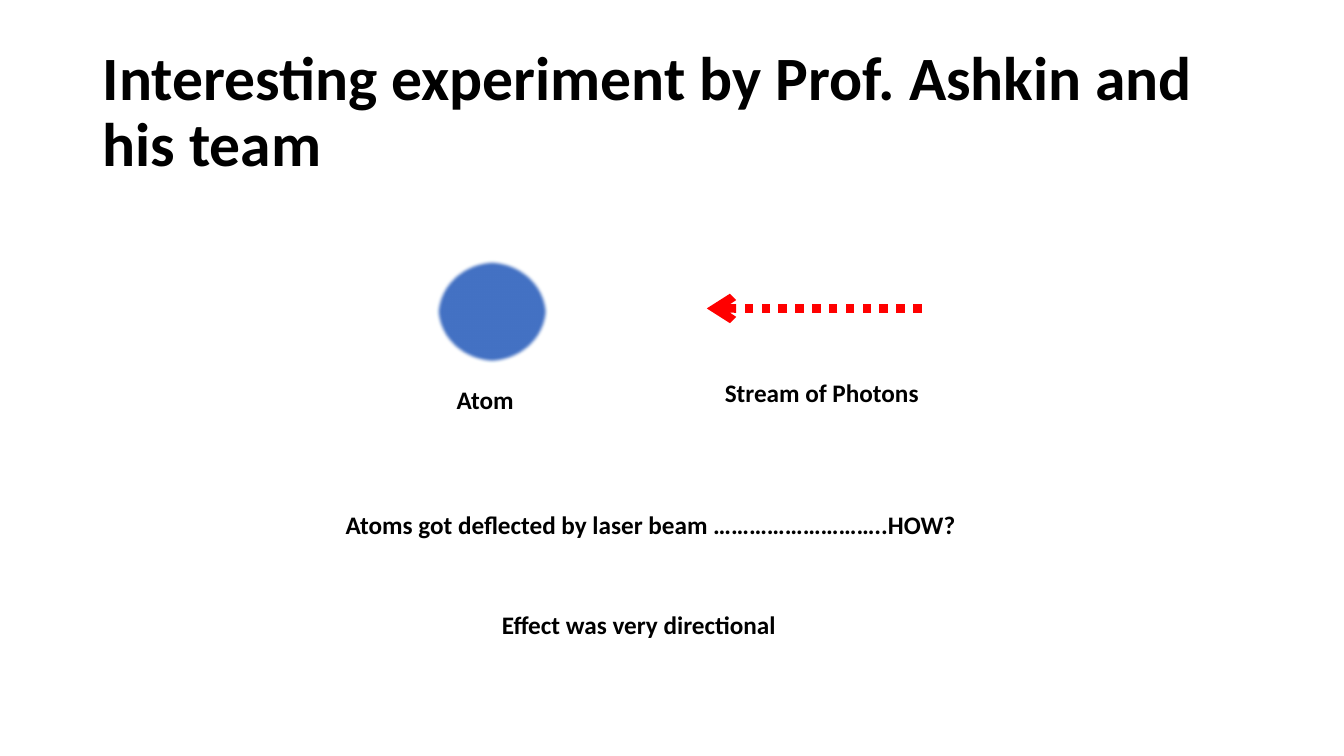
from lxml import etree
from pptx import Presentation
from pptx import util as u
from pptx.dml.color import RGBColor
from pptx.enum import dml, shapes, text
from pptx.oxml import ns

COLORS = {"ink": "000000", "atom": "4472C4", "rim": "00B0F0", "photons": "FF0000"}
BOLD = {"name": "Calibri", "bold": True}
TITLE = {"word_wrap": True, "vertical_anchor": text.MSO_ANCHOR.MIDDLE}
LABEL = {"word_wrap": False, "auto_size": text.MSO_AUTO_SIZE.SHAPE_TO_FIT_TEXT}
LABELS = [
    ("Atom", 4.43, 3.76, 0.77),
    ("Stream of Photons", 7.09, 3.69, 2.14),
    ("Atoms got deflected by laser beam ………………………..HOW?", 3.33, 5, 6.3),
    ("Effect was very directional", 4.88, 6, 2.95),
]


def color(name):
    """Return the named colour."""
    return RGBColor.from_string(COLORS[name])


def apply(target, values):
    """Set every attribute in the dict of values."""
    for name, value in values.items():
        setattr(target, name, value)


def add_text(page, words, area, size, frame_format, spacing=1.0):
    """Add a text box with one bold paragraph."""
    box = page.shapes.add_textbox(*map(u.Inches, area))
    frame = box.text_frame
    apply(frame, frame_format)
    para = frame.paragraphs[0]
    para.line_spacing = spacing
    span = para.add_run()
    span.text = words
    apply(span.font, {**BOLD, "size": u.Pt(size)})
    span.font.color.rgb = color("ink")


def add_atom(page, area):
    """Add a ball with a soft edge."""
    atom = page.shapes.add_shape(shapes.MSO_SHAPE.OVAL, *map(u.Inches, area))
    atom.shadow.inherit = False
    atom.fill.solid()
    atom.fill.fore_color.rgb = color("atom")
    atom.line.color.rgb = color("rim")
    atom.line.width = u.Pt(1)
    effects = atom.element.spPr.find(ns.qn("a:effectLst"))
    etree.SubElement(effects, ns.qn("a:softEdge"), rad=str(u.Pt(2.5)))


def add_beam(page, ends):
    """Add a dotted line with an arrowhead at its end."""
    beam = page.shapes.add_connector(shapes.MSO_CONNECTOR.STRAIGHT, *map(u.Inches, ends))
    beam.line.color.rgb = color("photons")
    apply(beam.line, {"width": u.Pt(6), "dash_style": dml.MSO_LINE.ROUND_DOT})
    properties = beam.element.spPr
    etree.SubElement(properties.find(ns.qn("a:ln")), ns.qn("a:tailEnd"), type="arrow")
    etree.SubElement(properties, ns.qn("a:effectLst"))


def main():
    """Build and save the slide."""
    deck = Presentation()
    apply(deck, {"slide_width": u.Inches(13.33), "slide_height": u.Inches(7.5)})
    page = deck.slides.add_slide(deck.slide_layouts[6])
    add_text(page, "Interesting experiment by Prof. Ashkin and his team",
             (0.92, 0.4, 11.5, 1.45), 44, TITLE, 0.9)
    add_atom(page, (4.33, 2.58, 1.1, 1.02))
    add_beam(page, (9.14, 3.06, 7.01, 3.06))
    for words, left, top, width in LABELS:
        add_text(page, words, (left, top, width, 0.4), 18, LABEL)
    deck.save("out.pptx")


if __name__ == "__main__":
    main()
